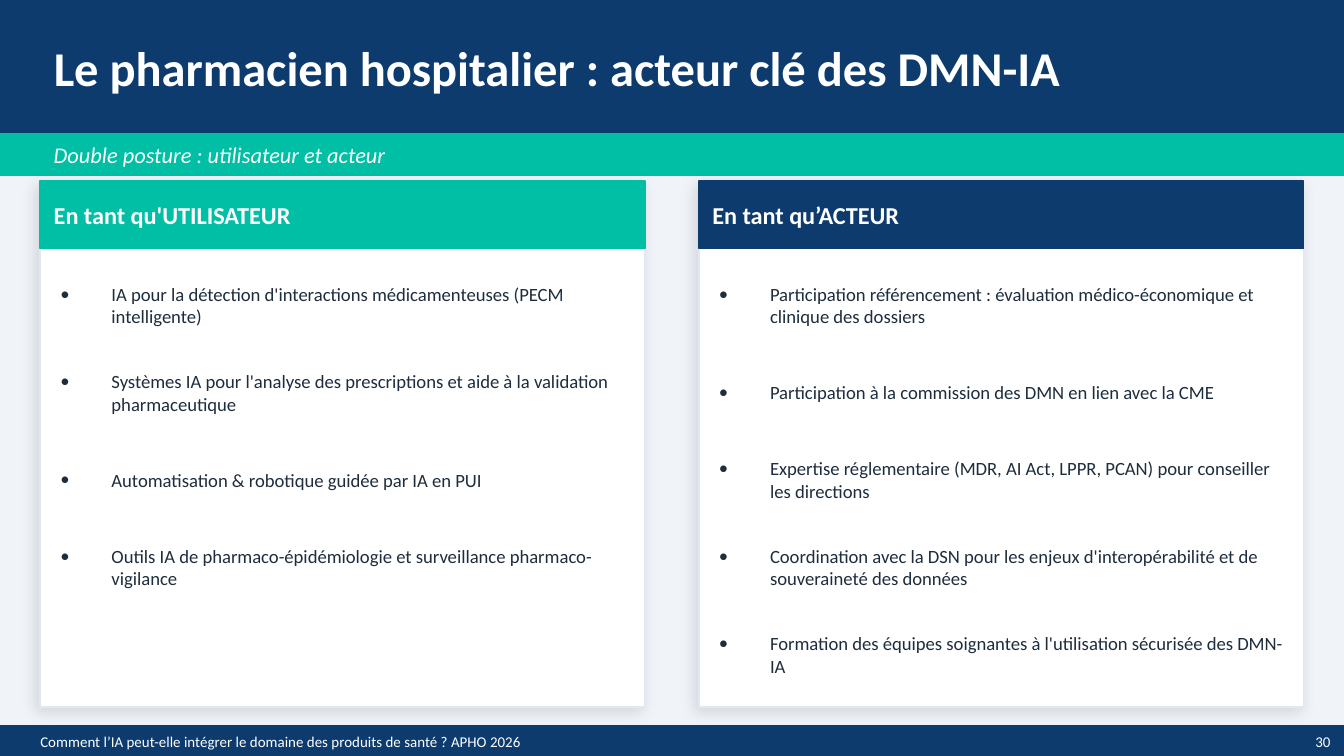
from lxml import etree
from pptx import Presentation
from pptx import util as u
from pptx.dml.color import RGBColor
from pptx.enum import shapes, text
from pptx.oxml import ns

NAVY, TEAL, WHITE, INK = "0D3B6E", "00BFA5", "FFFFFF", "1E2D3D"
FONT = "Calibri"
CARD_TOP, CARD_WIDTH = 1.35, 4.5
ITEM_TOP, ITEM_STEP = 1.97, 0.65

COLUMNS = [
    (0.3, TEAL, "En tant qu'UTILISATEUR", [
        "IA pour la détection d'interactions médicamenteuses (PECM intelligente)",
        "Systèmes IA pour l'analyse des prescriptions et aide à la validation pharmaceutique",
        "Automatisation & robotique guidée par IA en PUI",
        "Outils IA de pharmaco-épidémiologie et surveillance pharmaco-vigilance",
    ]),
    (5.2, NAVY, "En tant qu’ACTEUR", [
        "Participation référencement : évaluation médico-économique et clinique des dossiers",
        "Participation à la commission des DMN en lien avec la CME",
        "Expertise réglementaire (MDR, AI Act, LPPR, PCAN) pour conseiller les directions",
        "Coordination avec la DSN pour les enjeux d'interopérabilité et de souveraineté des données",
        "Formation des équipes soignantes à l'utilisation sécurisée des DMN-IA",
    ]),
]


def color(value):
    """Turn a hex string into a colour."""
    return RGBColor.from_string(value)


def add_band(page, left, top, width, height, fill, line=None):
    """Add a filled rectangle with a one-point outline."""
    band = page.shapes.add_shape(
        shapes.MSO_SHAPE.RECTANGLE, *map(u.Inches, (left, top, width, height)))
    band.shadow.inherit = False
    band.fill.solid()
    band.fill.fore_color.rgb = color(fill)
    band.line.color.rgb = color(line or fill)
    band.line.width = u.Pt(1)
    return band


def add_shadow(shape):
    """Give a shape a soft, faint outer shadow."""
    effects = shape.element.spPr.find(ns.qn("a:effectLst"))
    shadow = etree.SubElement(
        effects, ns.qn("a:outerShdw"), blurRad=str(u.Pt(8)), dist=str(u.Pt(3)),
        dir=str(135 * 60000), algn="bl", rotWithShape="0")
    tint = etree.SubElement(shadow, ns.qn("a:srgbClr"), val="000000")
    etree.SubElement(tint, ns.qn("a:alpha"), val="12000")


def add_bullet(para):
    """Give a paragraph a hanging bullet."""
    properties = para._p.get_or_add_pPr()
    indent = u.Inches(0.38)
    properties.set("marL", str(indent))
    properties.set("indent", str(-indent))
    etree.SubElement(properties, ns.qn("a:buSzPct"), val="100000")
    etree.SubElement(properties, ns.qn("a:buFont"), typeface=FONT)
    etree.SubElement(properties, ns.qn("a:buChar"), char="•")


def write(box, words, size, ink=WHITE, bold=False, italic=False,
          align=text.PP_ALIGN.LEFT, bullet=False):
    """Fill a box with one formatted paragraph, centred vertically."""
    frame = box.text_frame
    frame.word_wrap = True
    frame.auto_size = text.MSO_AUTO_SIZE.NONE
    frame.vertical_anchor = text.MSO_ANCHOR.MIDDLE
    frame.margin_left = frame.margin_right = frame.margin_top = frame.margin_bottom = 0
    para = frame.paragraphs[0]
    para.alignment = align
    if bullet:
        add_bullet(para)
    span = para.add_run()
    span.text = words
    font = span.font
    font.name, font.size, font.bold, font.italic = FONT, u.Pt(size), bold, italic
    font.color.rgb = color(ink)


def add_label(page, left, top, width, height, words, size, **style):
    """Add a text box holding one formatted paragraph."""
    box = page.shapes.add_textbox(*map(u.Inches, (left, top, width, height)))
    write(box, words, size, **style)


def add_header(page):
    """Add the title and subtitle on their bands."""
    band = add_band(page, 0, 0, 10, 1, NAVY)
    title = page.shapes.title
    title.left, title.top, title.width, title.height = map(u.Inches, (0.4, 0, 9.2, 1))
    write(title, "Le pharmacien hospitalier : acteur clé des DMN-IA", 26, bold=True)
    band.element.addnext(title.element)
    add_band(page, 0, 1, 10, 0.3, TEAL)
    add_label(page, 0.4, 1, 9.2, 0.3, "Double posture : utilisateur et acteur", 12, italic=True)


def add_footer(page):
    """Add the footer band with the event and the page number."""
    top, height = 5.4, 0.23
    add_band(page, 0, top, 10, height, NAVY)
    add_label(page, 0.3, top, 7, height,
              "Comment l’IA peut-elle intégrer le domaine des produits de santé ? APHO 2026", 8)
    add_label(page, 9.3, top, 0.6, height, "30", 8, align=text.PP_ALIGN.RIGHT)


def add_card(page, left, accent, heading, items):
    """Add a white card with a coloured heading and a bulleted list."""
    add_shadow(add_band(page, left, CARD_TOP, CARD_WIDTH, 3.91, WHITE, "E2E8F0"))
    add_band(page, left, CARD_TOP, CARD_WIDTH, 0.5, accent)
    add_label(page, left + 0.1, CARD_TOP + 0.03, CARD_WIDTH - 0.2, 0.44, heading, 13, bold=True)
    for index, item in enumerate(items):
        add_label(page, left + 0.15, ITEM_TOP + index * ITEM_STEP, CARD_WIDTH - 0.3, 0.6,
                  item, 10, ink=INK, bullet=True)


def main():
    """Build the widescreen slide and save the deck."""
    deck = Presentation()
    deck.slide_width = u.Inches(10)
    deck.slide_height = deck.slide_width * 9 // 16
    page = deck.slides.add_slide(deck.slide_layouts[5])
    page.background.fill.solid()
    page.background.fill.fore_color.rgb = color("F0F4F9")
    add_header(page)
    add_footer(page)
    for column in COLUMNS:
        add_card(page, *column)
    deck.save("out.pptx")


if __name__ == "__main__":
    main()
